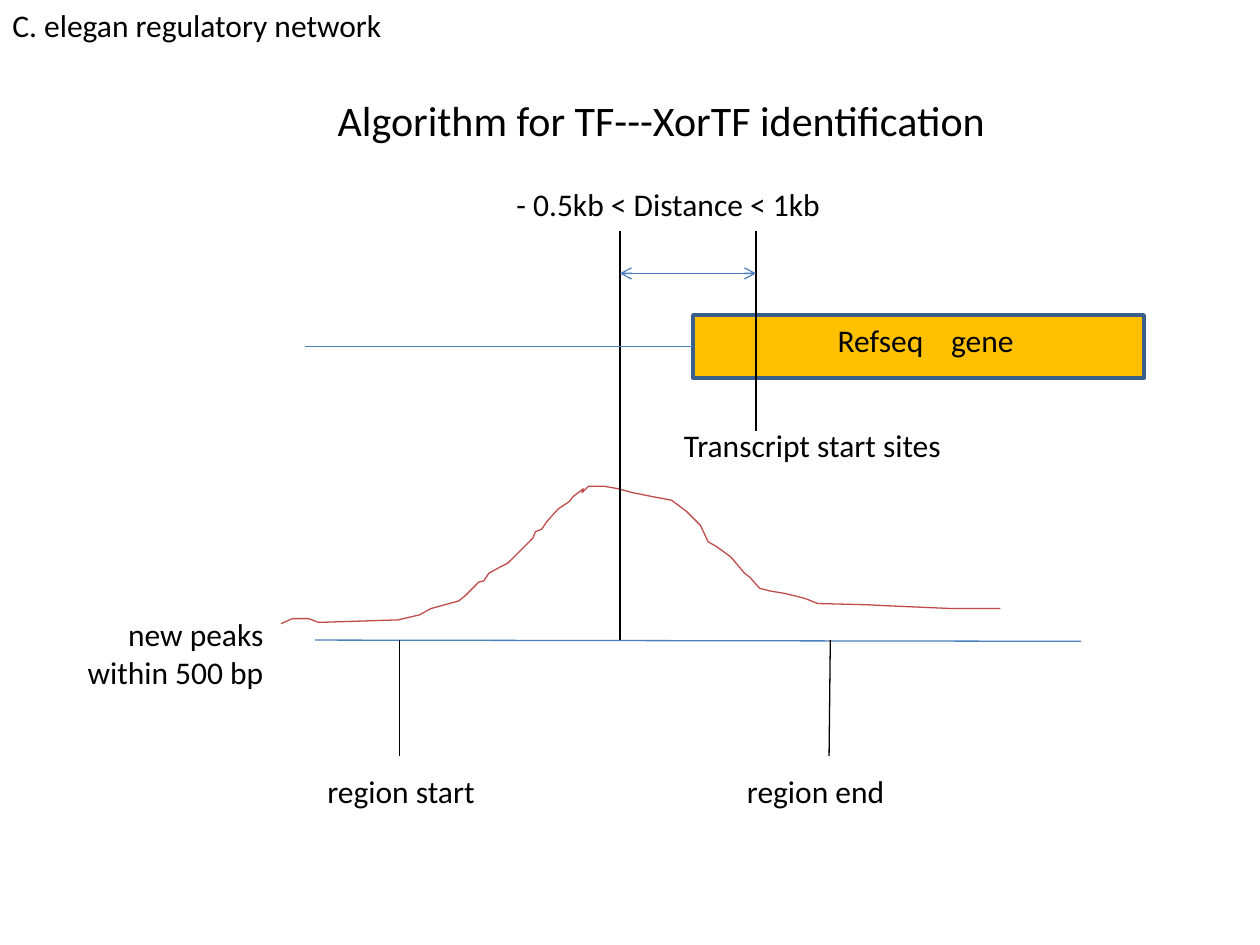
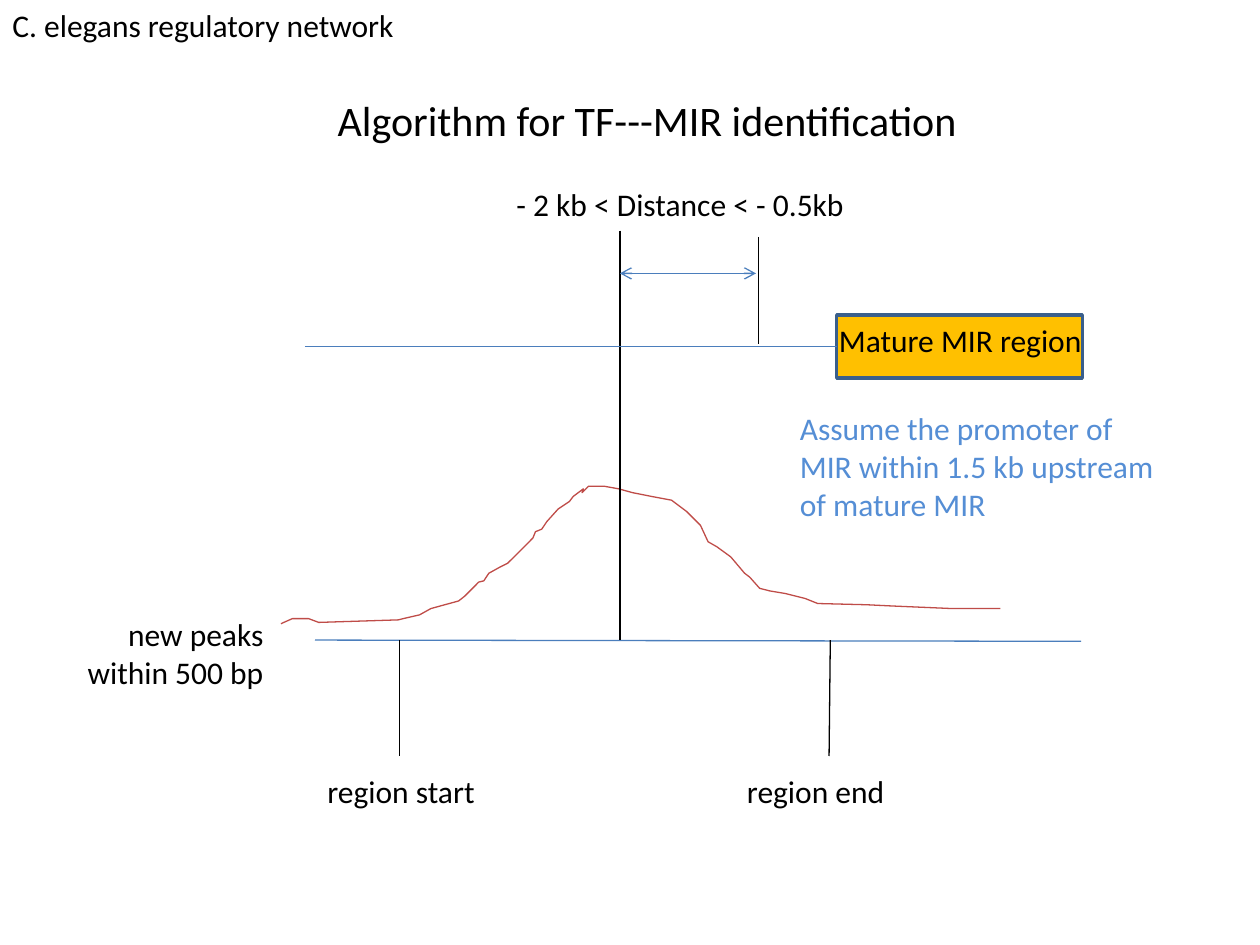
"""Two slides on finding the targets of a transcription factor from peaks."""
from lxml import etree
from pptx import Presentation, util as u
from pptx.dml.color import RGBColor
from pptx.enum import shapes, text
from pptx.oxml.ns import qn

PX = 9144
FONT = "Calibri"
HUE = {"ink": "000000", "axis": "4B7EBC", "peak": "BF4C48",
       "gene": "FFC000", "edge": "3A5F8C", "note": "558ED5"}

MID, BASE, TRACK, SPAN = 492, 508, 275, 217
TITLE = (258, 70, 625, 50)
CURVE = [
    (223, 495), (232, 491), (245, 491), (253, 494), (316, 492), (320, 491),
    (333, 488), (342, 483), (353, 480), (364, 477), (369, 473), (380, 462),
    (384, 461), (388, 455), (397, 450), (403, 447), (414, 436), (423, 427),
    (425, 422), (430, 420), (434, 414), (443, 404), (452, 398), (455, 394),
    (463, 388), (462, 391), (467, 386), (480, 386), (491, 388), (502, 391),
    (517, 394), (533, 397), (545, 406), (556, 417), (562, 430), (569, 434),
    (580, 442), (591, 455), (595, 458), (603, 467), (611, 469), (623, 471),
    (639, 475), (649, 479), (688, 480), (709, 481), (756, 483), (794, 483)]
LINES = [("axis", 250, BASE, 858, BASE + 1), ("ink", MID, 183, MID, BASE),
         ("ink", 317, BASE, 317, 600), ("ink", 659, BASE, 658, 600)]
LABELS = [("region start", 250, 608, 175, 40), ("region end", 583, 608, 175, 40)]
PEAKS = ("new peaks\nwithin 500 bp", 25, 483, 194, 71)

SLIDES = [
    {"title": "Algorithm for TF---XorTF identification",
     "head": "C. elegan regulatory network",
     "range": "- 0.5kb < Distance < 1kb",
     "box": (550, 250, 358, 50), "mark": (600, 183, 600, 342),
     "name": ("Refseq\tgene", 655, 250, 225, 40), "tab": 90,
     "note": ("Transcript start sites", 533, 333, 317, 40), "hue": "ink"},
    {"title": "Algorithm for TF---MIR identification",
     "head": "C. elegans regulatory network",
     "range": "- 2 kb < Distance < - 0.5kb",
     "box": (664, 250, 195, 50), "mark": (602, 188, 602, 273),
     "name": ("Mature MIR region", 656, 250, 266, 40), "tab": None,
     "note": ("Assume the promoter of MIR within 1.5 kb upstream of mature MIR",
              625, 320, 305, 101), "hue": "note"},
]


def emu(*nums):
    return [n * PX for n in nums]


def rgb(hue):
    return RGBColor.from_string(HUE[hue])


def style(frame, size=18, hue="ink", align=text.PP_ALIGN.LEFT):
    frame.word_wrap = True
    frame.vertical_anchor = text.MSO_ANCHOR.TOP
    for para in frame.paragraphs:
        para.alignment = align
        for run in para.runs:
            run.font.name, run.font.size = FONT, u.Pt(size)
            run.font.color.rgb = rgb(hue)


def label(slide, words, *area, **look):
    frame = slide.shapes.add_textbox(*emu(*area)).text_frame
    frame.text = words
    style(frame, **look)
    return frame


def line(slide, hue, *ends):
    link = slide.shapes.add_connector(shapes.MSO_CONNECTOR.STRAIGHT, *emu(*ends))
    link.line.color.rgb, link.line.width = rgb(hue), u.Pt(0.75)
    etree.SubElement(link._element.spPr, qn("a:effectLst"))
    return link


def arrows(link):
    stroke = link.line._get_or_add_ln()
    for end in ("a:headEnd", "a:tailEnd"):
        etree.SubElement(stroke, qn(end), type="arrow")


def tab(para, pos):
    stops = etree.SubElement(para._p.get_or_add_pPr(), qn("a:tabLst"))
    etree.SubElement(stops, qn("a:tab"), pos=str(pos * PX), algn="l")


def peak(slide):
    path = slide.shapes.build_freeform(*CURVE[0], scale=PX)
    path.add_line_segments(CURVE[1:], close=False)
    wave = path.convert_to_shape()
    wave.shadow.inherit = False
    wave.fill.background()
    wave.line.color.rgb, wave.line.width = rgb("peak"), u.Pt(0.75)


def gene(slide, area):
    box = slide.shapes.add_shape(shapes.MSO_SHAPE.RECTANGLE, *emu(*area))
    box.shadow.inherit = False
    box.fill.solid()
    box.fill.fore_color.rgb = rgb("gene")
    box.line.color.rgb, box.line.width = rgb("edge"), u.Pt(2)
    return box


def build(deck, data):
    slide = deck.slides.add_slide(deck.slide_layouts[5])
    title = slide.shapes.title
    title.left, title.top, title.width, title.height = emu(*TITLE)
    title.text_frame.text = data["title"]
    style(title.text_frame, size=24)
    peak(slide)
    for item in LINES:
        line(slide, *item)
    box = gene(slide, data["box"])
    line(slide, "axis", 242, TRACK, data["box"][0], TRACK).end_connect(box, 1)
    line(slide, "ink", *data["mark"])
    arrows(line(slide, "axis", MID, SPAN, 600, SPAN))
    for item in LABELS:
        label(slide, *item)
    label(slide, *PEAKS, align=text.PP_ALIGN.RIGHT)
    label(slide, data["head"], 0, 0, 367, 40)
    label(slide, data["range"], 400, 142, 295, 40)
    name = label(slide, *data["name"])
    if data["tab"]:
        tab(name.paragraphs[0], data["tab"])
    label(slide, *data["note"], hue=data["hue"])


def main():
    deck = Presentation()
    deck.slide_width, deck.slide_height = emu(1000, 750)
    for data in SLIDES:
        build(deck, data)
    deck.save("out.pptx")


if __name__ == "__main__":
    main()
